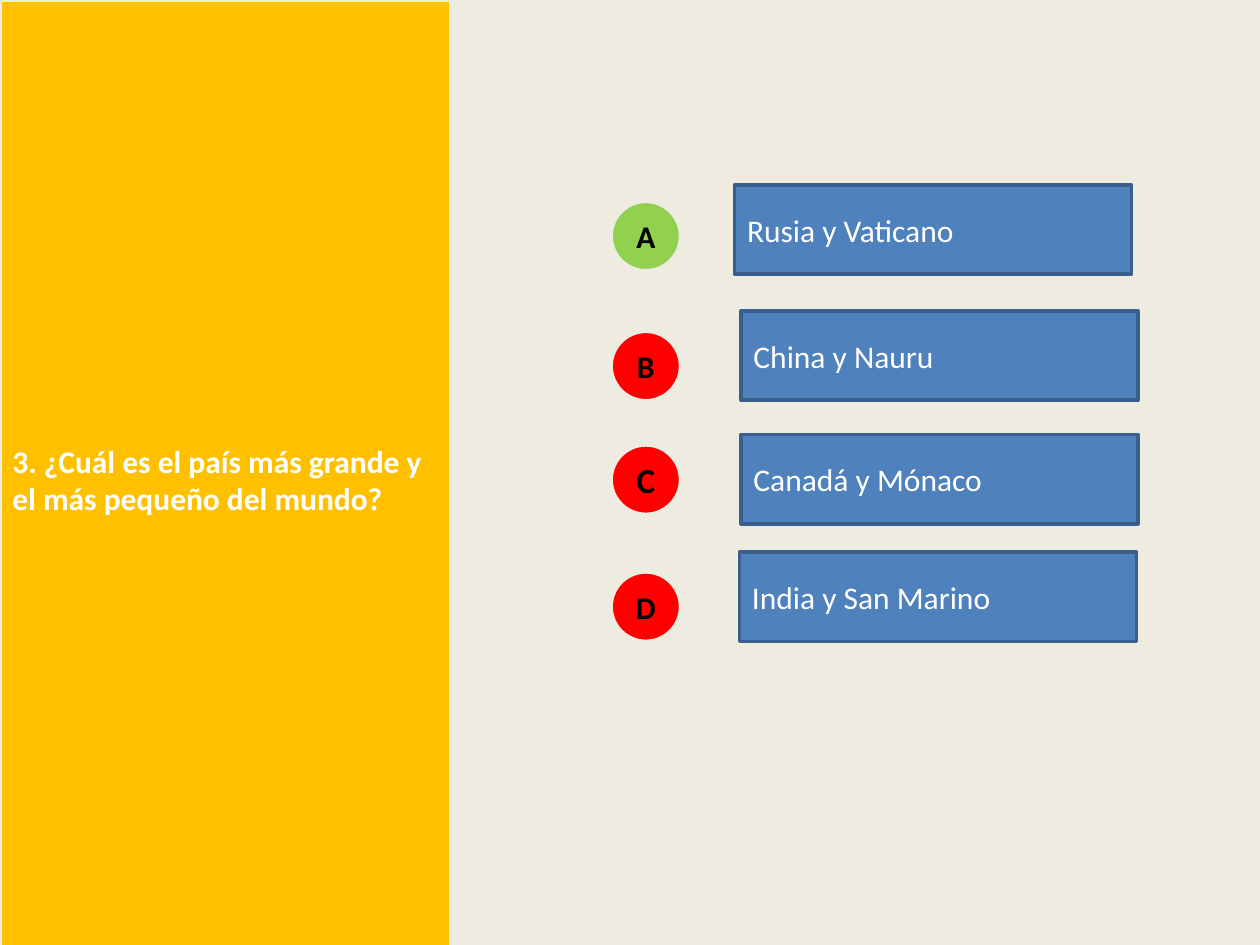
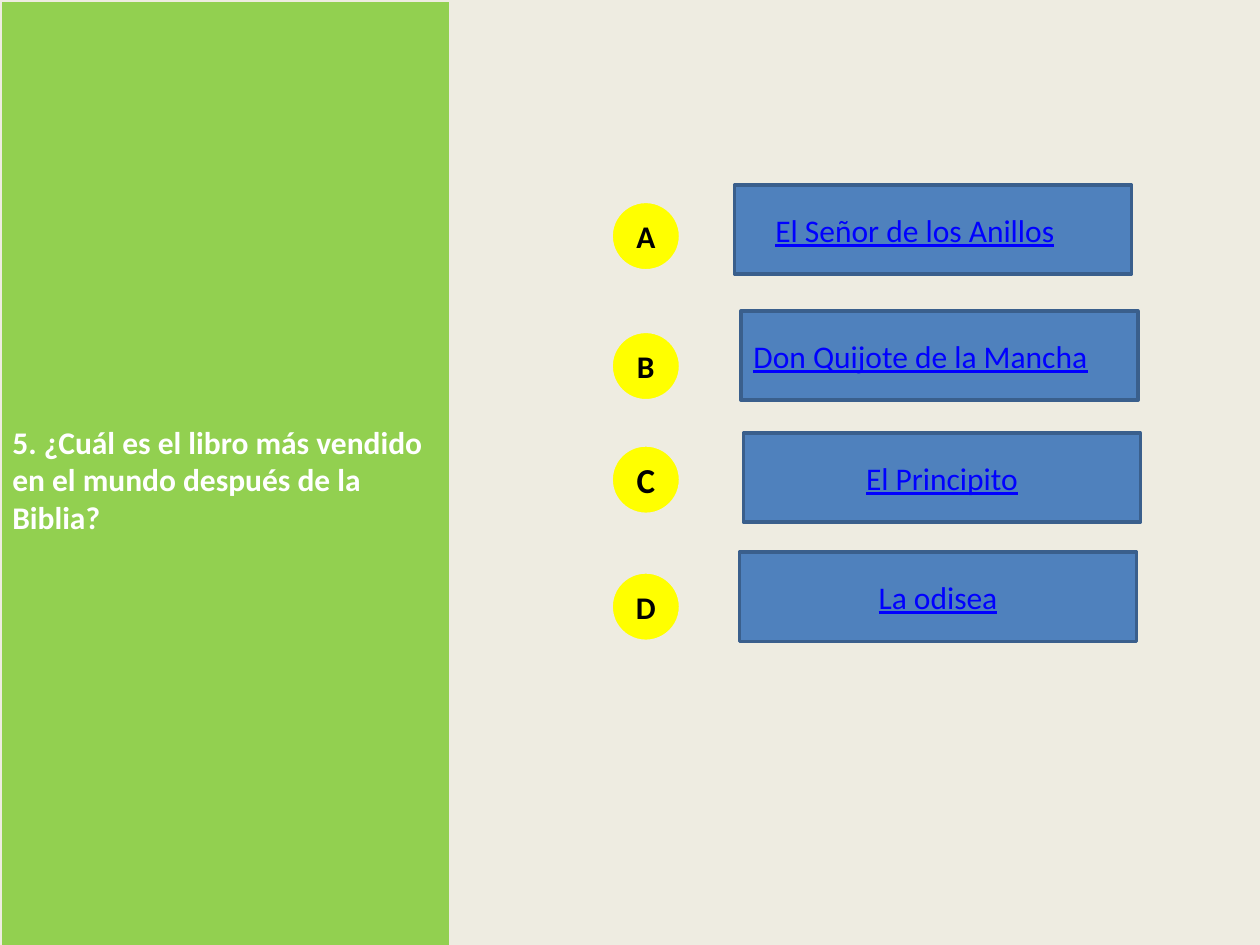
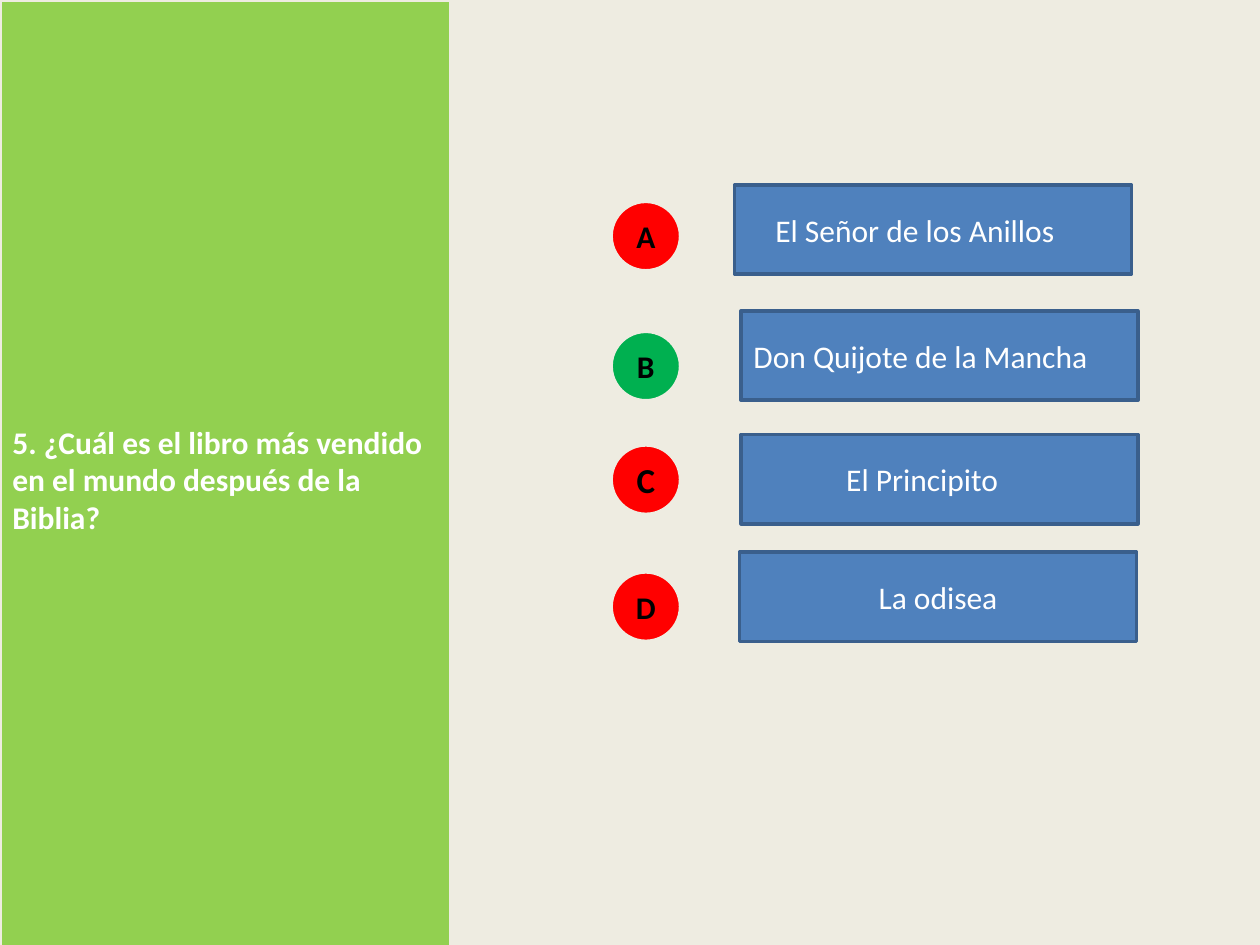
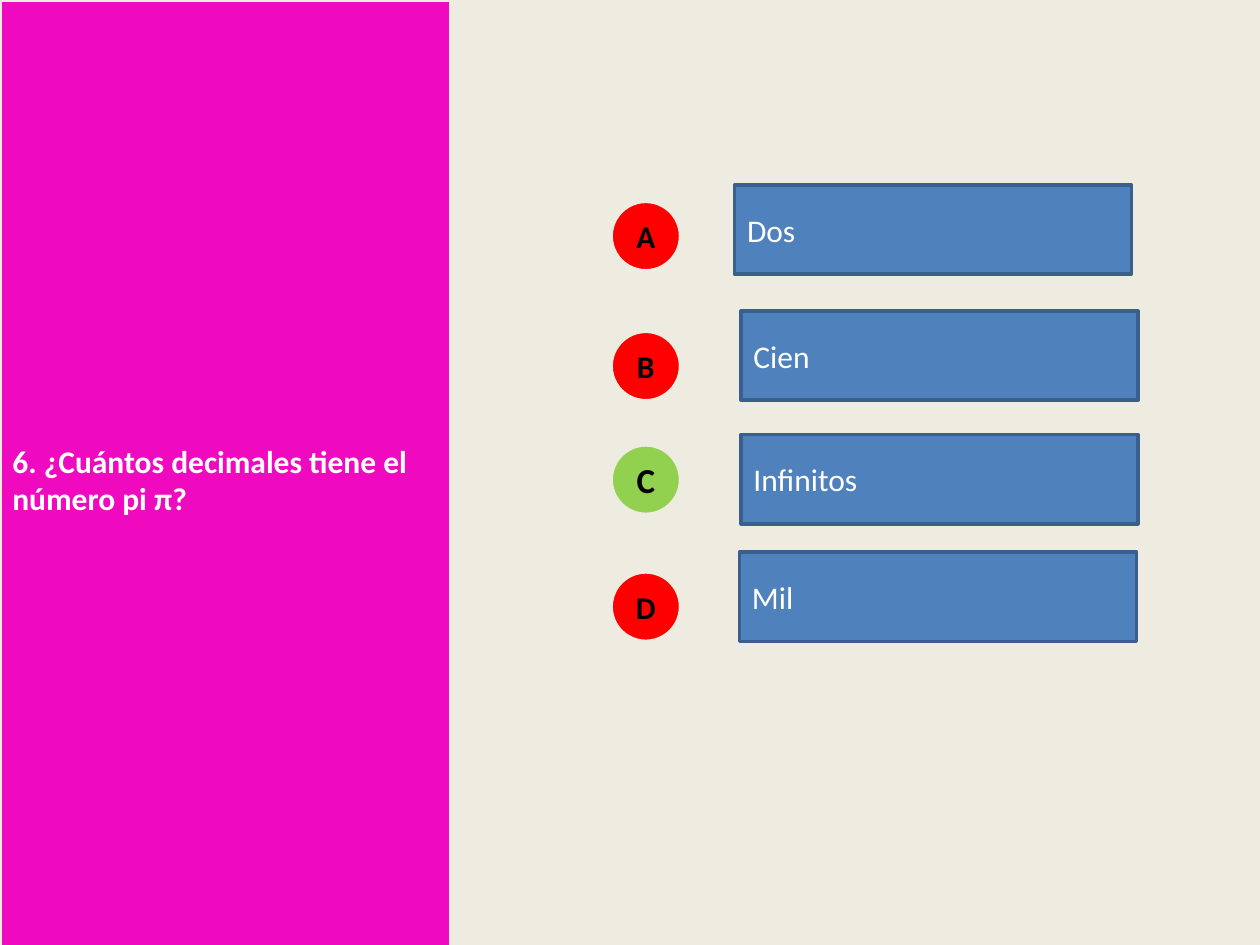
"""Build four quiz slides: a question panel and four lettered answers."""
from dataclasses import dataclass

from pptx import Presentation
from pptx import util as u
from pptx.dml.color import RGBColor
from pptx.enum import shapes, text


@dataclass(frozen=True)
class Theme:
    """Colours, font and type sizes of the quiz."""
    font: str = "Calibri"
    size: int = 18
    big: int = 20
    edge: int = 2
    paper: str = "EEECE1"
    box: str = "4F81BD"
    rim: str = "3A5F8C"
    white: str = "FFFFFF"
    black: str = "000000"
    link: str = "0000FF"
    amber: str = "FFC000"
    lime: str = "92D050"
    pink: str = "F00ABF"
    red: str = "FF0000"
    green: str = "00B050"
    yellow: str = "FFFF00"


@dataclass(frozen=True)
class Reply:
    """One answer: its words, alignment, indent and shift in cm."""
    words: str
    mid: bool = False
    dent: float = 0
    shift: tuple = (0, 0)


@dataclass(frozen=True)
class Quiz:
    """One slide: question, panel colour, answers, dot colours and state."""
    ask: str
    tint: str
    replies: tuple
    dots: tuple
    linked: bool = False


T = Theme()
RECT = shapes.MSO_SHAPE.RECTANGLE
OVAL = shapes.MSO_SHAPE.OVAL
PANEL = (0, 0, 9.09, 19.33)
BOX = (8, 1.8)
DOT = 1.4
DOT_X = 12.32
INSET = 0.25
ROWS = (
    ("A", T.size, 4.06, (14.81, 3.73)),
    ("B", T.size, 6.68, (14.94, 6.27)),
    ("C", T.big, 8.97, (14.94, 8.76)),
    ("D", T.size, 11.53, (14.91, 11.13)),
)

BOOK = "5. ¿Cuál es el libro más vendido en el mundo después de la Biblia?"
LORD = Reply("El Señor de los Anillos", dent=0.57)
KNIGHT = Reply("Don Quijote de la Mancha")
PRINCE = "El Principito"
POEM = Reply("La odisea", mid=True)

DECK = (
    Quiz("3. ¿Cuál es el país más grande y el más pequeño del mundo?", T.amber,
         (Reply("Rusia y Vaticano"), Reply("China y Nauru"),
          Reply("Canadá y Mónaco"), Reply("India y San Marino")),
         (T.lime, T.red, T.red, T.red)),
    Quiz(BOOK, T.lime,
         (LORD, KNIGHT, Reply(PRINCE, mid=True, shift=(0.05, -0.03)), POEM),
         (T.yellow,) * 4, linked=True),
    Quiz(BOOK, T.lime, (LORD, KNIGHT, Reply(PRINCE, dent=1.87), POEM),
         (T.red, T.green, T.red, T.red)),
    Quiz("6. ¿Cuántos decimales tiene el número pi π?", T.pink,
         (Reply("Dos"), Reply("Cien"), Reply("Infinitos"), Reply("Mil")),
         (T.red, T.red, T.lime, T.red)),
)


def rgb(code):
    """Turn a hex code into a colour."""
    return RGBColor.from_string(code)


def add_form(slide, kind, place, fill, rim):
    """Add a flat filled shape with an outline."""
    form = slide.shapes.add_shape(kind, *(u.Cm(v) for v in place))
    form.shadow.inherit = False
    form.fill.solid()
    form.fill.fore_color.rgb = rgb(fill)
    form.line.color.rgb = rgb(rim)
    form.line.width = u.Pt(T.edge)
    return form


def write(form, words, ink, size=T.size, bold=False, mid=False, line=False):
    """Write one run of text, centred in height, into a shape."""
    frame = form.text_frame
    frame.word_wrap = True
    frame.vertical_anchor = text.MSO_ANCHOR.MIDDLE
    para = frame.paragraphs[0]
    para.alignment = text.PP_ALIGN.CENTER if mid else text.PP_ALIGN.LEFT
    run = para.add_run()
    run.text = words
    font = run.font
    font.name, font.size, font.bold = T.font, u.Pt(size), bold
    font.underline = line
    font.color.rgb = rgb(ink)


def add_panel(slide, quiz):
    """Add the coloured question panel on the left."""
    form = add_form(slide, RECT, PANEL, quiz.tint, T.paper)
    write(form, quiz.ask, T.white, bold=True)


def add_reply(slide, reply, spot, linked):
    """Add one answer box."""
    left, top = (a + b for a, b in zip(spot, reply.shift))
    form = add_form(slide, RECT, (left, top, *BOX), T.box, T.rim)
    form.text_frame.margin_left = u.Cm(INSET + reply.dent)
    ink = T.link if linked else T.white
    write(form, reply.words, ink, mid=reply.mid, line=linked)


def add_dot(slide, mark, size, top, fill):
    """Add the round letter mark of an answer."""
    form = add_form(slide, OVAL, (DOT_X, top, DOT, DOT), fill, T.paper)
    write(form, mark, T.black, size, bold=True, mid=True)


def add_quiz(deck, quiz):
    """Add one whole quiz slide."""
    slide = deck.slides.add_slide(deck.slide_layouts[6])
    slide.background.fill.solid()
    slide.background.fill.fore_color.rgb = rgb(T.paper)
    add_panel(slide, quiz)
    for row, reply, fill in zip(ROWS, quiz.replies, quiz.dots):
        mark, size, top, spot = row
        add_reply(slide, reply, spot, quiz.linked)
        add_dot(slide, mark, size, top, fill)


def main():
    """Build and save the deck."""
    deck = Presentation()
    deck.slide_width, deck.slide_height = u.Cm(25.4), u.Cm(19.05)
    for quiz in DECK:
        add_quiz(deck, quiz)
    deck.save("out.pptx")


if __name__ == "__main__":
    main()
